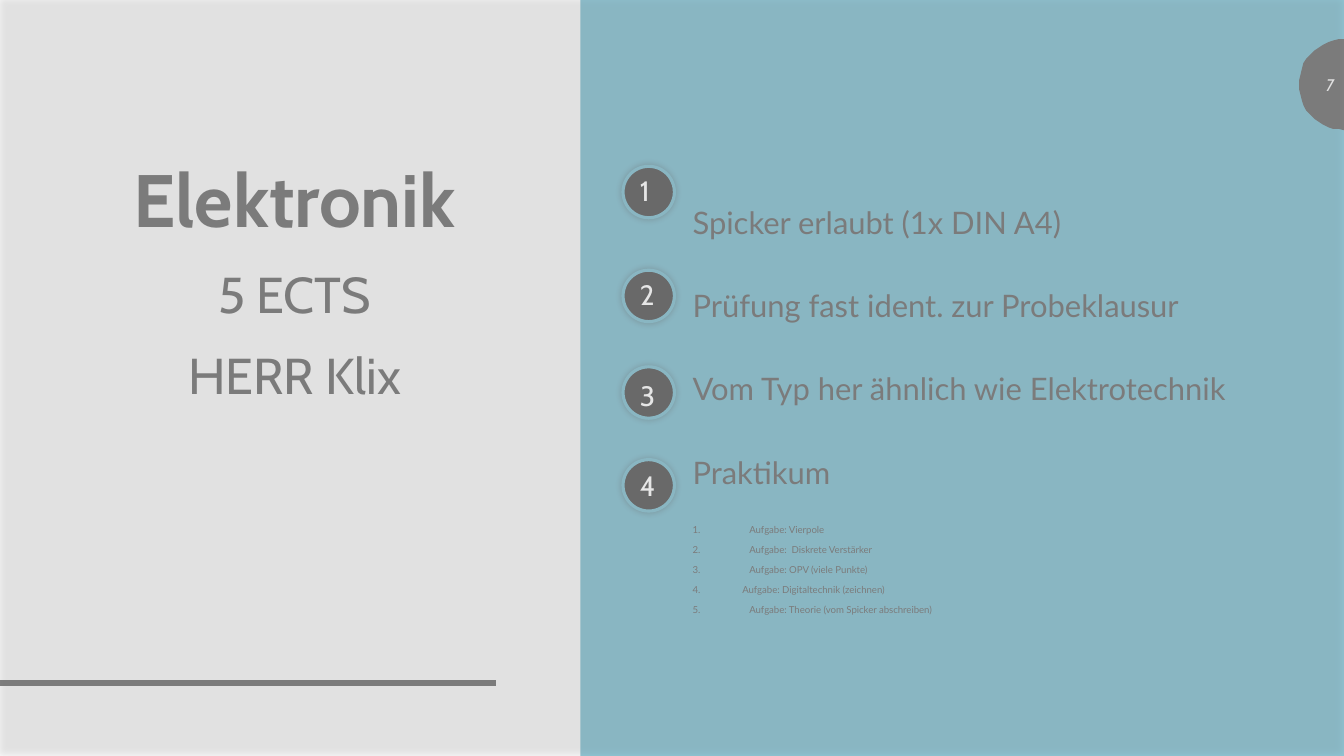
from dataclasses import dataclass
from math import cos, pi, sin

from lxml import etree
from pptx import Presentation
from pptx.dml.color import RGBColor
from pptx.enum.shapes import MSO_CONNECTOR, MSO_SHAPE
from pptx.enum.text import MSO_ANCHOR, MSO_AUTO_SIZE, PP_ALIGN
from pptx.oxml.ns import qn
from pptx.util import Pt

RECTANGLE, OVAL = MSO_SHAPE.RECTANGLE, MSO_SHAPE.OVAL
STRAIGHT = MSO_CONNECTOR.STRAIGHT
TOP, MIDDLE = MSO_ANCHOR.TOP, MSO_ANCHOR.MIDDLE
LEFT, CENTER, RIGHT = PP_ALIGN.LEFT, PP_ALIGN.CENTER, PP_ALIGN.RIGHT
NO_AUTOFIT = MSO_AUTO_SIZE.NONE


@dataclass(frozen=True)
class Theme:
    paper: str = "F5F5F5"
    panel: str = "439EB7"
    ink: str = "262626"
    badge: str = "000000"
    white: str = "FFFFFF"
    heading_font: str = "Cabin"
    body_font: str = "Lato"
    title_size: float = 53
    subtitle_size: float = 36
    point_size: float = 22.1
    task_size: float = 6.9
    badge_size: float = 20
    page_size: float = 12


THEME = Theme()
WIDTH, HEIGHT = 960, 540
POINTS = ["Spicker erlaubt (1x DIN A4)", "Prüfung fast ident. zur Probeklausur",
          "Vom Typ her ähnlich wie Elektrotechnik", "Praktikum"]
# Task text, indent, first number of its list
TASKS = [("Aufgabe: Vierpole", 40.5, None),
         ("Aufgabe:  Diskrete Verstärker", 40.5, None),
         ("Aufgabe: OPV (viele Punkte)", 40.5, None),
         ("Aufgabe: Digitaltechnik (zeichnen)", 35.5, 4),
         ("Aufgabe: Theorie (vom Spicker abschreiben)", 40.5, 4)]
# Badge top, distance from there to the top of its number
BADGES = [(118.8, 1.5), (193, 2), (262, 5), (328.3, 3)]


def place(shape, box):
    shape.left, shape.top, shape.width, shape.height = (Pt(value) for value in box)


def bring_to_front(shape):
    shape.element.getparent().append(shape.element)


def paint(shape, color):
    shape.shadow.inherit = False
    shape.fill.solid()
    shape.fill.fore_color.rgb = RGBColor.from_string(color)
    shape.line.fill.background()


def add_glow_shadow(shape):
    effects = shape.element.spPr.find(qn("a:effectLst"))
    shadow = etree.SubElement(effects, qn("a:outerShdw"), blurRad=str(Pt(5)),
                              dist="0", dir="0", rotWithShape="0")
    color = etree.SubElement(shadow, qn("a:srgbClr"), val="000000")
    etree.SubElement(color, qn("a:alpha"), val="40000")


def prepare_frame(shape, anchor, wrap=True):
    frame = shape.text_frame
    frame.auto_size = NO_AUTOFIT
    frame.word_wrap = wrap
    frame.vertical_anchor = anchor
    frame.margin_left = frame.margin_right = Pt(7.2)
    frame.margin_top = frame.margin_bottom = Pt(3.6)
    return frame


def write(paragraph, text, font, size, color, align=LEFT, bold=False, italic=False,
          before=0, after=0, spacing=1.0):
    paragraph.alignment = align
    paragraph.space_before, paragraph.space_after = Pt(before), Pt(after)
    paragraph.line_spacing = spacing
    run = paragraph.add_run()
    run.text = text
    run.font.name, run.font.size = font, Pt(size)
    run.font.bold, run.font.italic = bold, italic
    run.font.color.rgb = RGBColor.from_string(color)


def set_bullet(paragraph, indent=0.0, numbered=False, start=None):
    properties = paragraph._p.get_or_add_pPr()
    properties.set("marL", str(Pt(indent)))
    properties.set("indent", str(-Pt(indent)))
    if numbered:
        bullet = etree.SubElement(properties, qn("a:buAutoNum"), type="arabicPeriod")
        if start:
            bullet.set("startAt", str(start))
    else:
        etree.SubElement(properties, qn("a:buNone"))


def add_label(slide, box, text, size, color, anchor=TOP, wrap=True, **style):
    label = slide.shapes.add_textbox(*(Pt(value) for value in box))
    frame = prepare_frame(label, anchor, wrap)
    write(frame.paragraphs[0], text, THEME.heading_font, size, color, **style)


def add_backdrop(slide, panel_left):
    slide.background.fill.solid()
    slide.background.fill.fore_color.rgb = RGBColor.from_string(THEME.paper)
    rule = slide.shapes.add_connector(STRAIGHT, 0, Pt(488), Pt(354), Pt(488))
    rule.line.color.rgb = RGBColor.from_string(THEME.ink)
    rule.line.width = Pt(4.5)
    etree.SubElement(rule.element.spPr, qn("a:effectLst"))
    panel = slide.shapes.add_shape(RECTANGLE, Pt(panel_left), 0,
                                   Pt(WIDTH - panel_left), Pt(HEIGHT))
    paint(panel, THEME.panel)


def add_page_tab(slide, center_y, radius):
    # Half disc on the right edge
    arc = [(WIDTH - radius * sin(pi * step / 26), center_y - radius * cos(pi * step / 26))
           for step in range(27)]
    builder = slide.shapes.build_freeform(*arc[0], scale=Pt(1))
    builder.add_line_segments(arc[1:], close=True)
    paint(builder.convert_to_shape(), THEME.ink)
    add_label(slide, (WIDTH - 32.5, center_y - 14.4, 32.5, 28.8), "7", THEME.page_size,
              THEME.paper, anchor=MIDDLE, align=RIGHT, italic=True)


def fill_title(slide, box):
    title = slide.shapes.title
    place(title, box)
    bring_to_front(title)
    frame = prepare_frame(title, TOP)
    write(frame.paragraphs[0], "Elektronik", THEME.heading_font, THEME.title_size,
          THEME.ink, CENTER, bold=True, spacing=0.9)
    for text in ("5 ECTS", "HERR Klix"):
        write(frame.add_paragraph(), text, THEME.heading_font, THEME.subtitle_size,
              THEME.ink, CENTER, before=19, spacing=0.9)


def fill_body(slide, box):
    body = slide.placeholders[1]
    place(body, box)
    bring_to_front(body)
    frame = prepare_frame(body, MIDDLE)
    for index, text in enumerate(POINTS):
        paragraph = frame.add_paragraph() if index else frame.paragraphs[0]
        write(paragraph, text, THEME.body_font, THEME.point_size, THEME.ink,
              before=9, after=24)
        set_bullet(paragraph)
    for text, indent, start in TASKS:
        paragraph = frame.add_paragraph()
        write(paragraph, text, THEME.body_font, THEME.task_size, THEME.ink, after=6)
        set_bullet(paragraph, indent, numbered=True, start=start)


def add_badges(slide, left, diameter):
    for number, (top, drop) in enumerate(BADGES, start=1):
        badge = slide.shapes.add_shape(OVAL, Pt(left), Pt(top), Pt(diameter), Pt(diameter))
        paint(badge, THEME.badge)
        badge.line.color.rgb = RGBColor.from_string(THEME.panel)
        badge.line.width = Pt(2.25)
        add_glow_shadow(badge)
        add_label(slide, (left + 5, top + drop, 26, 31), str(number),
                  THEME.badge_size, THEME.white, wrap=False)


def add_veil(slide):
    veil = slide.shapes.add_shape(RECTANGLE, 0, 0, Pt(WIDTH), Pt(HEIGHT))
    paint(veil, THEME.white)
    color = veil.element.spPr.find(qn("a:solidFill")).find(qn("a:srgbClr"))
    etree.SubElement(color, qn("a:alpha"), val="41000")
    add_glow_shadow(veil)


def main():
    presentation = Presentation()
    presentation.slide_width, presentation.slide_height = Pt(WIDTH), Pt(HEIGHT)
    slide = presentation.slides.add_slide(presentation.slide_layouts[1])
    add_backdrop(slide, panel_left=414.5)
    add_page_tab(slide, center_y=60.4, radius=32.2)
    fill_title(slide, (47, 113, 327, 309))
    fill_body(slide, (487.5, 119, 453.5, 347))
    add_badges(slide, left=445, diameter=36.7)
    add_veil(slide)
    presentation.save("out.pptx")


if __name__ == "__main__":
    main()
